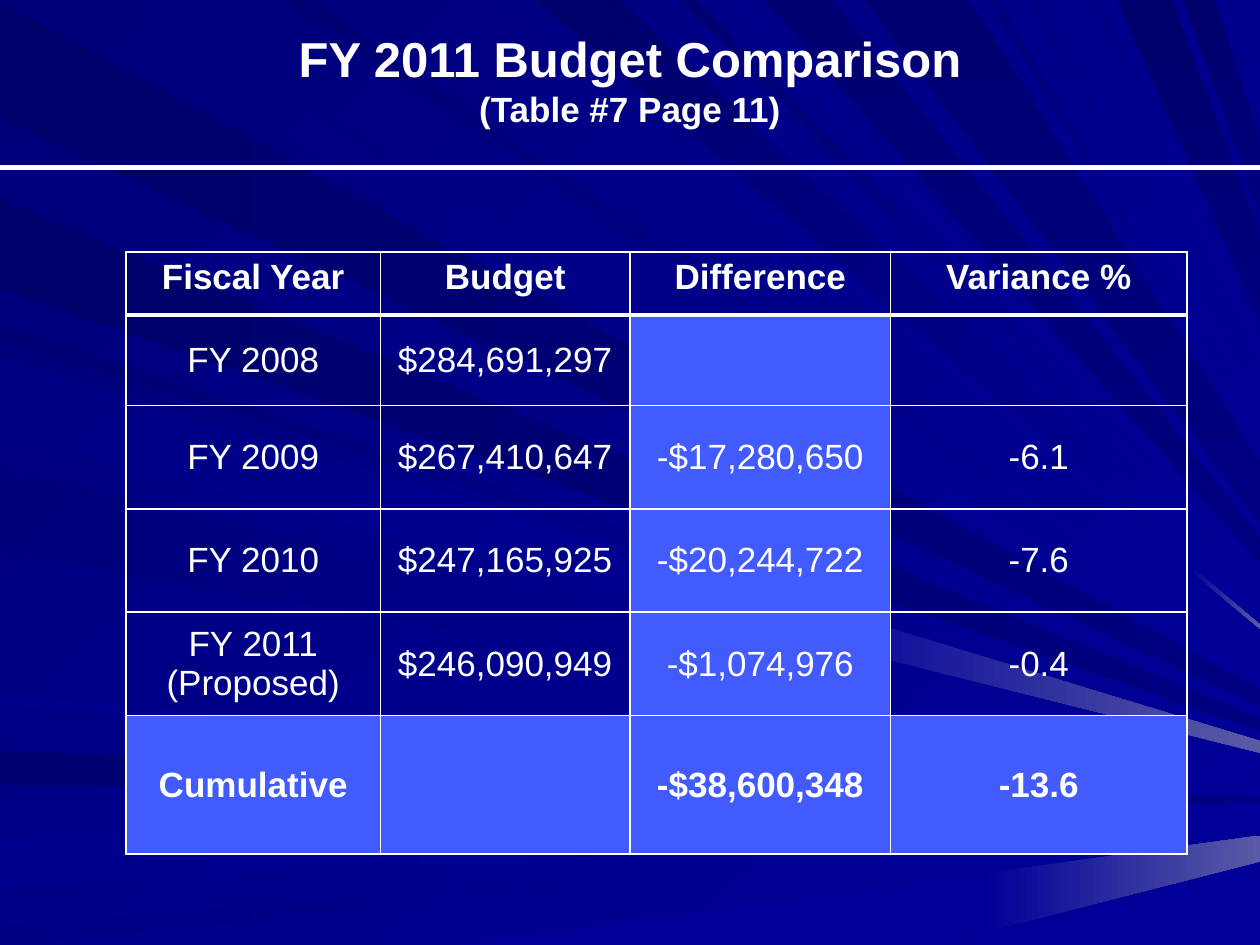
from lxml import etree
from pptx import Presentation
from pptx.dml.color import RGBColor
from pptx.enum.shapes import MSO_CONNECTOR
from pptx.enum.text import MSO_ANCHOR, PP_ALIGN
from pptx.oxml.ns import qn
from pptx.util import Inches, Pt

CENTER = PP_ALIGN.CENTER
TOP, MIDDLE = MSO_ANCHOR.TOP, MSO_ANCHOR.MIDDLE
STRAIGHT = MSO_CONNECTOR.STRAIGHT
FONT = "Arial"
WIDE, HIGH = 10, 7.5

COLORS = {
    "night": "00006B", "deep": "000073", "dark": "00007B", "navy": "000080",
    "mid": "000085", "soft": "00008C", "blue": "000099", "haze": "5A5AA6",
    "white": "FFFFFF", "mark": "425BFF",
}

# Rays run from a stretch of one slide edge towards a common focus
FOCUS = (11.7, 6.4)
RAYS = [
    ("left", 0.02, 0.93, "night", "navy"),
    ("top", 0.26, 1.01, "dark", "blue"),
    ("left", 5.96, 6.23, "deep", "navy"),
    ("left", 6.65, 7.04, "soft", "blue"),
    ("left", 7.35, 7.5, "mid", "blue"),
    ("bottom", 3.64, 7.42, "blue", "blue"),
    ("left", 2.58, 2.7, "deep", "blue"),
    ("left", 1.59, 2.28, "night", "navy"),
    ("top", 3.98, 4.16, "mid", "blue"),
    ("top", 4.26, 4.92, "night", "blue"),
    ("top", 5.4, 5.52, "deep", "blue"),
    ("top", 6.06, 6.61, "deep", "navy"),
    ("top", 8.87, 9.3, "night", "navy"),
    ("top", 9.39, 9.64, "night", "navy"),
    ("left", 2.78, 3.42, "dark", "blue"),
    ("left", 3.74, 4.37, "dark", "blue"),
    ("left", 5.52, 5.6, "soft", "blue"),
    ("top", 2.25, 2.47, "deep", "blue"),
    ("top", 5.77, 5.88, "soft", "blue"),
    ("top", 6.86, 7.7, "deep", "navy"),
    ("top", 7.85, 7.92, "dark", "blue"),
    ("top", 8.15, 8.24, "mid", "blue"),
    ("top", 8.65, 8.72, "mid", "blue"),
    ("left", 2.83, 3.47, "mid", "blue"),
]
# Pale ends of some rays: edge, stretch, where the pale part begins
TIPS = [
    ("left", 2.83, 3.47, 6.35),
    ("bottom", 3.64, 7.42, 7.8),
    ("top", 3.98, 4.16, 9.45),
]

TITLE = [("FY 2011 Budget Comparison", 28), ("(Table #7 Page 11)", 20)]
ROWS = [
    ("Fiscal Year", "Budget", "Difference", "Variance %"),
    ("FY 2008", "$284,691,297", "", ""),
    ("FY 2009", "$267,410,647", "-$17,280,650", "-6.1"),
    ("FY 2010", "$247,165,925", "-$20,244,722", "-7.6"),
    ("FY 2011 (Proposed)", "$246,090,949", "-$1,074,976", "-0.4"),
    ("Cumulative", "", "-$38,600,348", "-13.6"),
]
WIDTHS = [2.02, 1.98, 2.07, 2.35]
HEIGHTS = [0.5, 0.72, 0.82, 0.82, 0.82, 1.1]
LAST = len(ROWS) - 1
MARKED = 2  # the Difference column


def color(name):
    return RGBColor.from_string(COLORS[name])


def paint(fill, first, last, angle=0):
    if first == last:
        fill.solid()
        fill.fore_color.rgb = color(first)
        return
    fill.gradient()
    fill.gradient_angle = -angle % 360
    for stop, name in zip(fill.gradient_stops, (first, last)):
        stop.color.rgb = color(name)


def place(edge, value):
    return {"left": (0, value), "top": (value, 0), "bottom": (value, HIGH)}[edge]


def toward(start, x):
    """Point at x on the line from start to the focus."""
    share = (x - start[0]) / (FOCUS[0] - start[0])
    return x, start[1] + share * (FOCUS[1] - start[1])


def slant(edge, low, last):
    if last == "navy":
        return 90 if edge == "top" else 0
    return 45 if edge == "top" or low < 5 else 0


def add_ray(slide, corners, first, last, angle):
    points = [(Inches(x), Inches(y)) for x, y in corners]
    path = slide.shapes.build_freeform(*points[0])
    path.add_line_segments(points[1:], close=True)
    ray = path.convert_to_shape()
    ray.shadow.inherit = False
    ray.line.fill.background()
    paint(ray.fill, first, last, angle)


def add_rays(slide):
    paint(slide.background.fill, "dark", "blue", 45)
    for edge, low, high, first, last in RAYS:
        a, b = place(edge, low), place(edge, high)
        corners = [a, b, toward(b, WIDE), toward(a, WIDE)]
        add_ray(slide, corners, first, last, slant(edge, low, last))
    for edge, low, high, x in TIPS:
        a, b = place(edge, low), place(edge, high)
        corners = [toward(a, x), toward(b, x), toward(b, WIDE), toward(a, WIDE)]
        add_ray(slide, corners, "blue", "haze", 0)


def write(para, text, size, bold):
    para.alignment = CENTER
    run = para.add_run()
    run.text = text
    font = run.font
    font.name, font.size, font.bold = FONT, Pt(size), bold
    font.color.rgb = color("white")


def add_title(slide):
    box = slide.shapes.add_textbox(Inches(0.5), 0, Inches(9), Inches(1.25))
    frame = box.text_frame
    frame.word_wrap = True
    frame.vertical_anchor = MIDDLE
    para = frame.paragraphs[0]
    for i, (text, size) in enumerate(TITLE):
        if i:
            para.add_line_break()
        write(para, text, size, True)

    # Rule under the title
    y = Inches(1.33)
    rule = slide.shapes.add_connector(STRAIGHT, 0, y, Inches(WIDE), y)
    rule.line.color.rgb = color("white")
    rule.line.width = Pt(3)
    etree.SubElement(rule._element.spPr, qn("a:effectLst"))


def border(cell, side, width):
    props = cell._tc.get_or_add_tcPr()
    line = etree.SubElement(props, qn("a:ln" + side), w=str(Pt(width)))
    fill = etree.SubElement(line, qn("a:solidFill"))
    etree.SubElement(fill, qn("a:srgbClr"), val=COLORS["white"])


def add_budget(slide):
    table = slide.shapes.add_table(
        len(ROWS), len(WIDTHS), Inches(1), Inches(2),
        Inches(sum(WIDTHS)), Inches(sum(HEIGHTS))).table
    table.first_row = table.horz_banding = False
    for col, width in zip(table.columns, WIDTHS):
        col.width = Inches(width)
    for r, texts in enumerate(ROWS):
        table.rows[r].height = Inches(HEIGHTS[r])
        for c, text in enumerate(texts):
            cell = table.cell(r, c)
            cell.vertical_anchor = MIDDLE if r else TOP
            for side in "LRTB":
                heavy = (r, side) in ((0, "B"), (1, "T"))
                border(cell, side, 3 if heavy else 1)
            if r == LAST or (r and c == MARKED):
                paint(cell.fill, "mark", "mark")
            else:
                cell.fill.background()
            if text:
                write(cell.text_frame.paragraphs[0], text, 20, r in (0, LAST))


def main():
    deck = Presentation()
    deck.slide_width, deck.slide_height = Inches(WIDE), Inches(HIGH)
    slide = deck.slides.add_slide(deck.slide_layouts[6])
    add_rays(slide)
    add_title(slide)
    add_budget(slide)
    deck.save("out.pptx")


if __name__ == "__main__":
    main()
